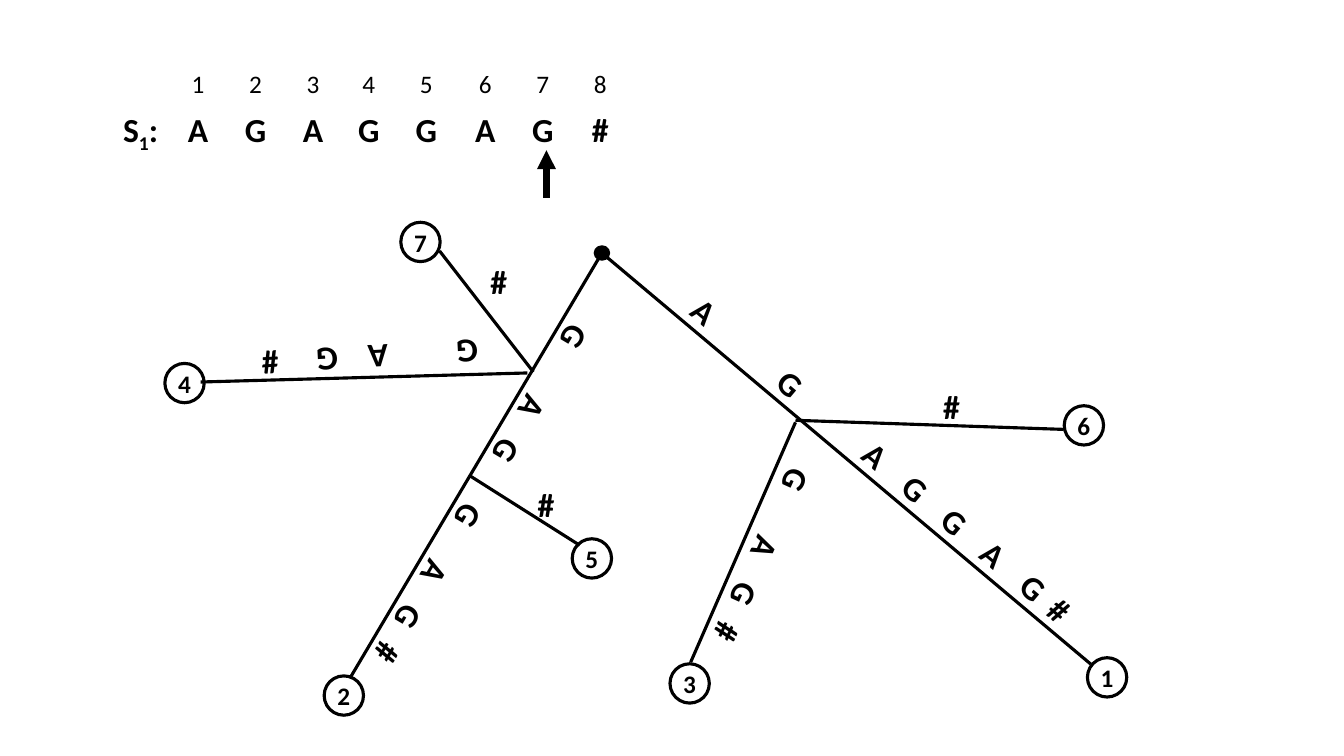
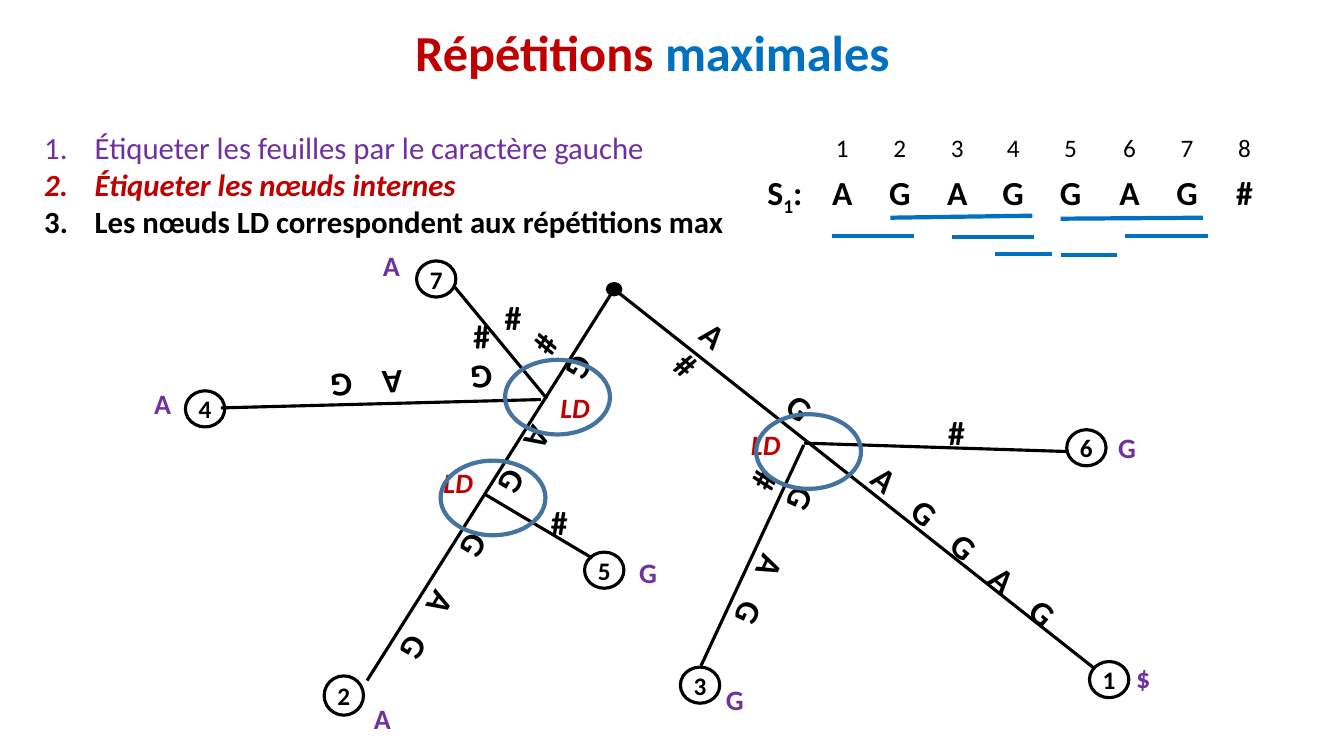
from lxml.etree import SubElement
from pptx import Presentation
from pptx.dml.color import RGBColor
from pptx.enum.shapes import MSO_CONNECTOR, MSO_SHAPE
from pptx.enum.text import MSO_ANCHOR, PP_ALIGN
from pptx.oxml.ns import qn
from pptx.util import Inches, Pt

# The grid has square cells, one inch wide
COLS, ROWS = 13.33, 7.5
FONT = "Calibri"
HUES = {"ink": "000000", "red": "C00000", "blue": "0070C0",
        "violet": "7030A0", "ring": "43739E"}

WORD = "AGAGGAG#"
WIDTHS = [0.57, 0.57, 0.57, 0.57, 0.54, 0.6, 0.57, 0.57, 0.57]

EDGES = [
    (5.97, 2.51, 10.82, 6.59), (5.97, 2.51, 3.47, 6.73),
    (7.89, 4.19, 6.85, 6.57), (5.23, 3.7, 1.99, 3.79),
    (4.66, 4.72, 5.75, 5.41), (10.55, 4.26, 7.89, 4.17),
    (4.36, 2.49, 5.29, 3.69),
]
# Middle of each leaf
LEAVES = {1: (10.98, 6.72), 3: (6.84, 6.78), 4: (1.83, 3.8),
          5: (5.87, 5.54), 6: (10.75, 4.22), 7: (4.17, 2.4)}
# Middle, length, angle, letters, and where each letter after the first starts
LABELS = [
    (8.78, 4.59, 5.08, 40.1, "AGAGGAG#", [1.11, 2.22, 2.73, 3.24, 3.75, 4.26, 4.62]),
    (4.78, 4.91, 4.04, 120.6, "GAGGAG#", [0.82, 1.32, 2.06, 2.72, 3.23, 3.67]),
    (7.53, 5.59, 2.21, 114.4, "GAG#", [0.74, 1.24, 1.68]),
    (3.66, 3.56, 2.36, 176.9, "GAG#", [0.89, 1.39, 1.98]),
]
ENDS = [(5.42, 5.0), (9.44, 4.03), (4.95, 2.79)]


def hue(name):
    return RGBColor.from_string(HUES[name])


def grid(*cells):
    return [Inches(cell) for cell in cells]


def style(para, size, tint="ink", bold=False, slant=False):
    font = para.font
    font.name, font.size = FONT, Pt(size)
    font.bold, font.italic = bold, slant
    font.color.rgb = hue(tint)


def tabs(para, stops):
    """Set left tab stops, in columns from the text's left edge."""
    stoplist = SubElement(para._p.get_or_add_pPr(), qn("a:tabLst"))
    for stop in stops:
        SubElement(stoplist, qn("a:tab"), pos=str(Inches(stop)), algn="l")


def number(para):
    props = para._p.get_or_add_pPr()
    props.set("marL", str(Inches(0.5)))
    props.set("indent", str(-Inches(0.5)))
    SubElement(props, qn("a:buFont"), typeface="+mj-lt")
    SubElement(props, qn("a:buAutoNum"), type="arabicPeriod")


def frame(slide, x, y, wide, high, turn=0):
    """Add an empty text box and return its text frame."""
    box = slide.shapes.add_textbox(*grid(x, y, wide, high))
    box.rotation = turn
    body = box.text_frame
    body.word_wrap = True
    body.margin_right = 0
    return body


def note(slide, x, y, words, wide=0.39, **looks):
    para = frame(slide, x, y, wide, 0.44).paragraphs[0]
    para.text = words
    style(para, 20, bold=True, **looks)


def line(slide, ends, tint="ink", weight=2.25):
    link = slide.shapes.add_connector(MSO_CONNECTOR.STRAIGHT, *grid(*ends))
    link.line.color.rgb = hue(tint)
    link.line.width = Pt(weight)
    SubElement(link._element.spPr, qn("a:effectLst"))
    return link


def arrow(slide, ends):
    link = line(slide, ends, weight=4.5)
    SubElement(link.line._get_or_add_ln(), qn("a:tailEnd"), type="triangle")


def oval(slide, x, y, wide, high, tint="ink", weight=2.25):
    """Add an unfilled ellipse around the middle x, y."""
    shape = slide.shapes.add_shape(
        MSO_SHAPE.OVAL, *grid(x - wide / 2, y - high / 2, wide, high))
    shape.shadow.inherit = False
    shape.fill.background()
    shape.line.color.rgb = hue(tint)
    shape.line.width = Pt(weight)
    return shape


def leaf(slide, x, y, name, high=0.39):
    body = oval(slide, x, y, 0.39, high).text_frame
    body.word_wrap = False
    body.vertical_anchor = MSO_ANCHOR.MIDDLE
    body.margin_left = body.margin_right = 0
    body.margin_top = body.margin_bottom = 0
    para = body.paragraphs[0]
    para.text = str(name)
    para.alignment = PP_ALIGN.CENTER
    style(para, 18, bold=True)


def label(slide, x, y, wide, high, words, turn=0, stops=()):
    body = frame(slide, x - wide / 2, y - high / 2, wide, high, turn)
    para = body.paragraphs[0]
    para.text = words
    tabs(para, stops)
    style(para, 24, bold=True)


def tree(slide, zoom=(1, 1), shift=(0, 0), fold=False):
    """Draw the suffix tree; fold puts the end mark on a second line."""
    def place(x, y):
        return x * zoom[0] + shift[0], y * zoom[1] + shift[1]

    for x1, y1, x2, y2 in EDGES:
        line(slide, place(x1, y1) + place(x2, y2))
    for x, y, wide, turn, word, stops in LABELS:
        steep = 45 < turn < 135
        long, thick = zoom[::-1] if steep else zoom
        words = "\t".join(word)
        if fold:
            words = words.replace("\t#", "\v#")
        label(slide, *place(x, y), wide * long, 0.5 * thick, words, turn, stops)
    for spot in ENDS:
        label(slide, *place(*spot), 0.37, 0.5 * zoom[1], "#")
    for name, spot in LEAVES.items():
        leaf(slide, *place(*spot), name, 0.39 * zoom[1])
    leaf(slide, 3.41, 6.9, 2)
    root = oval(slide, *place(5.97, 2.51), 0.15, 0.14 * zoom[1], weight=1)
    root.fill.solid()
    root.fill.fore_color.rgb = hue("ink")


def table(slide, x, y):
    """Add the word S1 with the rank of each letter above it."""
    chart = slide.shapes.add_table(
        2, len(WIDTHS), *grid(x, y, sum(WIDTHS), 0.95)).table
    chart.first_row = chart.horz_banding = False
    for col, wide in zip(chart.columns, WIDTHS):
        col.width = Inches(wide)
    chart.rows[0].height, chart.rows[1].height = grid(0.34, 0.61)
    ranks = [""] + [str(rank + 1) for rank in range(len(WORD))]
    for row, texts in enumerate((ranks, ["", *WORD])):
        for col, words in enumerate(texts):
            cell = chart.cell(row, col)
            cell.fill.background()
            para = cell.text_frame.paragraphs[0]
            para.text = words
            para.alignment = PP_ALIGN.CENTER
            style(para, 24 if row else 18, bold=bool(row))
    head = chart.cell(1, 0).text_frame.paragraphs[0]
    for words, base in (("S", 0), ("1", -25000), (":", 0)):
        run = head.add_run()
        run.text = words
        if base:
            run.font._element.set("baseline", str(base))


def title(slide):
    para = frame(slide, 4.02, 0.16, 4.96, 0.71).paragraphs[0]
    style(para, 36, bold=True)
    for words, tint in (("Répétitions ", "red"), ("maximales", "blue")):
        run = para.add_run()
        run.text = words
        run.font.color.rgb = hue(tint)


def steps(slide):
    body = frame(slide, 0.34, 1.23, 7.02, 1.21)
    items = [
        ("Étiqueter les feuilles par le caractère gauche", "violet", False, False),
        ("Étiqueter les nœuds internes", "red", True, True),
        ("Les nœuds LD correspondent aux répétitions max", "ink", True, False),
    ]
    for rank, (words, *looks) in enumerate(items):
        para = body.add_paragraph() if rank else body.paragraphs[0]
        para.text = words
        number(para)
        style(para, 22, *looks)


def marks(slide):
    """Add the left letters, the LD nodes and the repeats in the word."""
    for x, y, words in [(11.17, 6.5, "$"), (3.61, 6.91, "A"), (7.1, 6.72, "G"),
                        (1.43, 3.79, "A"), (6.24, 5.46, "G"),
                        (10.99, 4.22, "G"), (3.7, 2.42, "A")]:
        note(slide, x, y, words, tint="violet")
    for x, y in [(7.35, 4.19), (4.3, 4.57), (5.46, 3.82)]:
        note(slide, x, y, "LD", 0.57, tint="red", slant=True)
    for x, y, wide, rise in [
            (8.83, 2.16, 1.41, 0.02), (10.52, 2.17, 1.41, 0.01),
            (8.25, 2.34, 0.82, 0), (11.16, 2.34, 0.82, 0),
            (9.44, 2.35, 0.82, 0), (9.87, 2.52, 0.56, 0),
            (10.52, 2.53, 0.56, 0)]:
        line(slide, (x, y, x + wide, y - rise), "blue", 3)
    for x, y in [(5.53, 3.94), (4.89, 4.94), (8.02, 4.48)]:
        oval(slide, x, y, 1.04, 0.74, "ring", 3)


def main():
    deck = Presentation()
    deck.slide_width, deck.slide_height = grid(COLS, ROWS)
    blank = deck.slide_layouts[6]

    first = deck.slides.add_slide(blank)
    table(first, 1.11, 0.64)
    tree(first)
    arrow(first, (5.42, 1.96, 5.42, 1.49))

    second = deck.slides.add_slide(blank)
    tree(second, zoom=(0.98, 0.92), shift=(0.24, 0.56), fold=True)
    title(second)
    steps(second)
    table(second, 7.5, 1.27)
    marks(second)
    deck.save("out.pptx")


if __name__ == "__main__":
    main()
